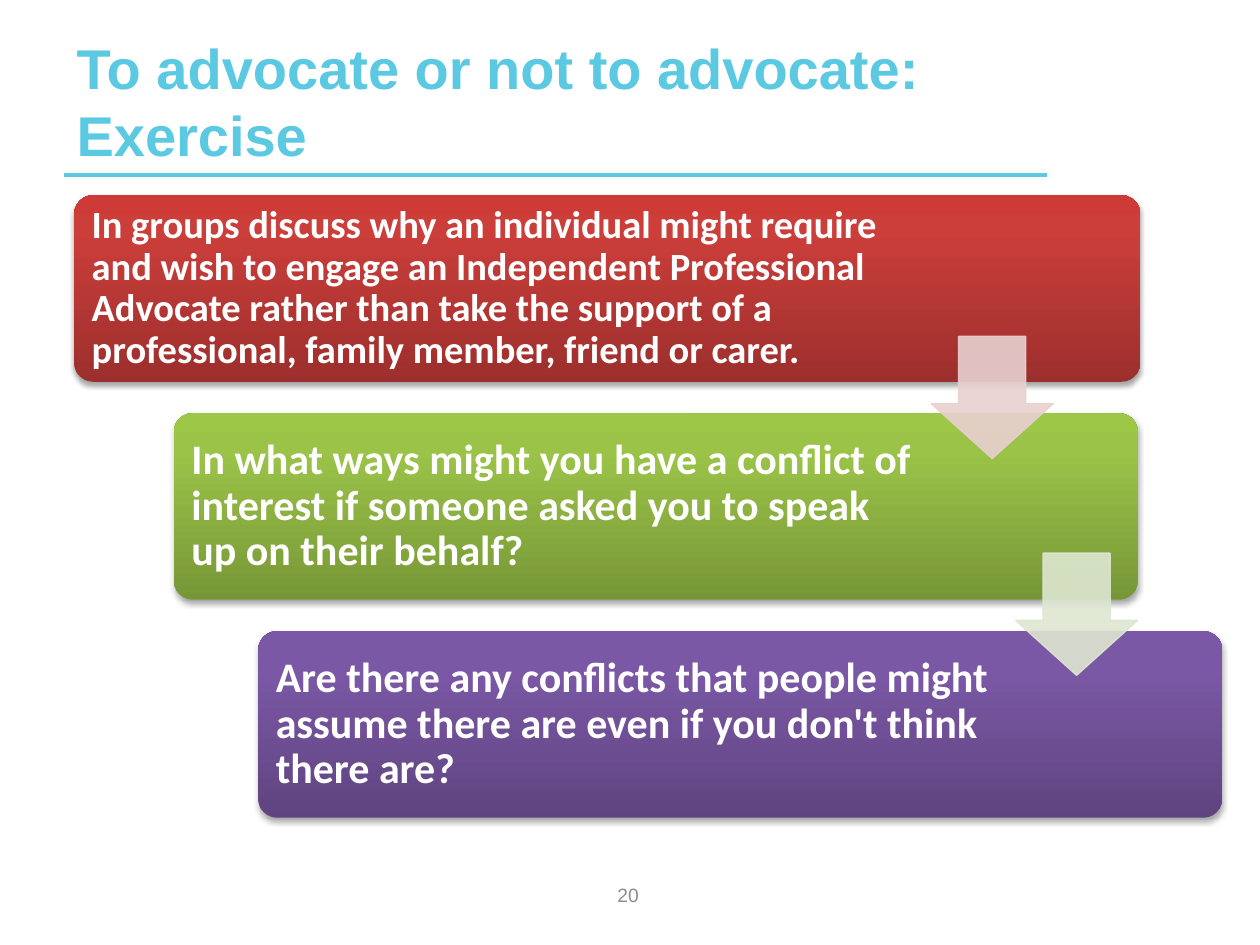
from copy import deepcopy

from lxml.etree import SubElement
from pptx import Presentation
from pptx.dml.color import RGBColor
from pptx.enum.shapes import MSO_CONNECTOR as Connector, MSO_SHAPE as Shape
from pptx.enum.text import MSO_ANCHOR as Anchor, PP_ALIGN as Align
from pptx.oxml.ns import qn
from pptx.util import Inches, Pt

SKY = RGBColor(0x5C, 0xC9, 0xE3)
WHITE = RGBColor(0xFF, 0xFF, 0xFF)
GREY = RGBColor(0x8C, 0x8C, 0x8C)
BLACK = RGBColor(0x00, 0x00, 0x00)
REDS = [RGBColor(0x9C, 0x2F, 0x2D), RGBColor(0xCB, 0x3E, 0x3A), RGBColor(0xCE, 0x3B, 0x37)]
GREENS = [RGBColor(0x77, 0x97, 0x37), RGBColor(0x9B, 0xC3, 0x48), RGBColor(0x9D, 0xC7, 0x46)]
PURPLES = [RGBColor(0x5F, 0x44, 0x80), RGBColor(0x7B, 0x58, 0xA6), RGBColor(0x7C, 0x57, 0xA8)]
PALE_RED = RGBColor(0xE8, 0xD0, 0xD0)
PALE_GREEN = RGBColor(0xDE, 0xE7, 0xD1)

CARD_TOP, CARD_STEP, CARD_HEIGHT, CARD_PAD = 1.55, 1.73, 1.48, 0.04
ARROW_SIZE = 0.97

CARDS = [
    (0.59, 8.46, 6.7, 22, REDS,
     "In groups discuss why an individual might require and wish to engage an Independent "
     "Professional Advocate rather than take the support of a professional, family member, "
     "friend or carer."),
    (1.38, 7.65, 5.92, 24, GREENS,
     "In what ways might you have a conflict of interest if someone asked you to speak up "
     "on their behalf?"),
    (2.05, 7.65, 5.92, 24, PURPLES,
     "Are there any conflicts that people might assume there are even if you don't think "
     "there are?"),
]
ARROWS = [(7.39, 2.67, PALE_RED), (8.06, 4.39, PALE_GREEN)]


class Painter:
    """Holds the slide and its style, and draws each kind of element."""

    def __init__(self, page, heading_font="Arial", card_font="Calibri"):
        self.page = page
        self.heading_font = heading_font
        self.card_font = card_font

    def text(self, left, top, width, height, words, font, size, color,
             bold=False, anchor=Anchor.MIDDLE, align=Align.LEFT, spacing=1.0, inset=0.05):
        box = self.page.shapes.add_textbox(*map(Inches, (left, top, width, height)))
        frame = box.text_frame
        frame.word_wrap = True
        frame.vertical_anchor = anchor
        frame.margin_top = frame.margin_bottom = Inches(inset)
        frame.text = words
        para = frame.paragraphs[0]
        para.alignment = align
        para.line_spacing = spacing
        for span in para.runs:
            span.font.name = font
            span.font.size = Pt(size)
            span.font.bold = bold
            span.font.color.rgb = color

    def rule(self, left, right, top, color, weight):
        line = self.page.shapes.add_connector(
            Connector.STRAIGHT, Inches(left), Inches(top), Inches(right), Inches(top))
        line.line.color.rgb = color
        line.line.width = Pt(weight)
        SubElement(line._element.spPr, qn("a:effectLst"))

    def shape(self, kind, left, top, width, height, adjustments):
        shape = self.page.shapes.add_shape(kind, *map(Inches, (left, top, width, height)))
        for index, value in enumerate(adjustments):
            shape.adjustments[index] = value
        shape.shadow.inherit = False
        return shape

    def card(self, left, top, width, text_width, size, colors, words):
        card = self.shape(Shape.ROUNDED_RECTANGLE, left, top, width, CARD_HEIGHT, [0.1])
        card.line.fill.background()
        card.fill.gradient()
        card.fill.gradient_angle = 90
        properties = card._element.spPr
        stops = properties.find(".//" + qn("a:gsLst"))
        stops.append(deepcopy(stops[0]))
        for stop, position, color in zip(card.fill.gradient_stops, (0, 0.8, 1), colors):
            stop.position = position
            stop.color.rgb = color
        shadow = SubElement(properties.find(qn("a:effectLst")), qn("a:outerShdw"),
                            blurRad=str(Pt(3.1)), dist=str(Pt(1.8)), dir="5400000",
                            rotWithShape="0")
        shade = SubElement(shadow, qn("a:srgbClr"), val=str(BLACK))
        SubElement(shade, qn("a:alpha"), val="35000")
        self.text(left + CARD_PAD, top + CARD_PAD, text_width, CARD_HEIGHT - 2 * CARD_PAD,
                  words, self.card_font, size, WHITE, bold=True, spacing=0.9, inset=0.1)

    def arrow(self, left, top, color):
        arrow = self.shape(Shape.DOWN_ARROW, left, top, ARROW_SIZE, ARROW_SIZE, [0.55, 0.45])
        arrow.fill.solid()
        arrow.fill.fore_color.rgb = color
        arrow.line.color.rgb = color
        arrow.line.width = Pt(0.75)
        for shade in arrow._element.spPr.findall(".//" + qn("a:srgbClr")):
            SubElement(shade, qn("a:alpha"), val="90000")


def main():
    deck = Presentation()
    deck.slide_width, deck.slide_height = Inches(10), Inches(7.5)
    painter = Painter(deck.slides.add_slide(deck.slide_layouts[6]))

    painter.rule(0.51, 8.31, 1.39, SKY, 2)
    painter.text(0.51, 0.29, 7.8, 1.09, "To advocate or not to advocate:\vExercise",
                 painter.heading_font, 32, SKY, bold=True, anchor=Anchor.BOTTOM)
    for row, (left, width, text_width, size, colors, words) in enumerate(CARDS):
        painter.card(left, CARD_TOP + row * CARD_STEP, width, text_width, size, colors, words)
    for left, top, color in ARROWS:
        painter.arrow(left, top, color)
    painter.text(3.82, 6.9, 2.33, 0.4, "20", painter.heading_font, 11, GREY,
                 align=Align.CENTER)

    deck.save("out.pptx")


if __name__ == "__main__":
    main()
